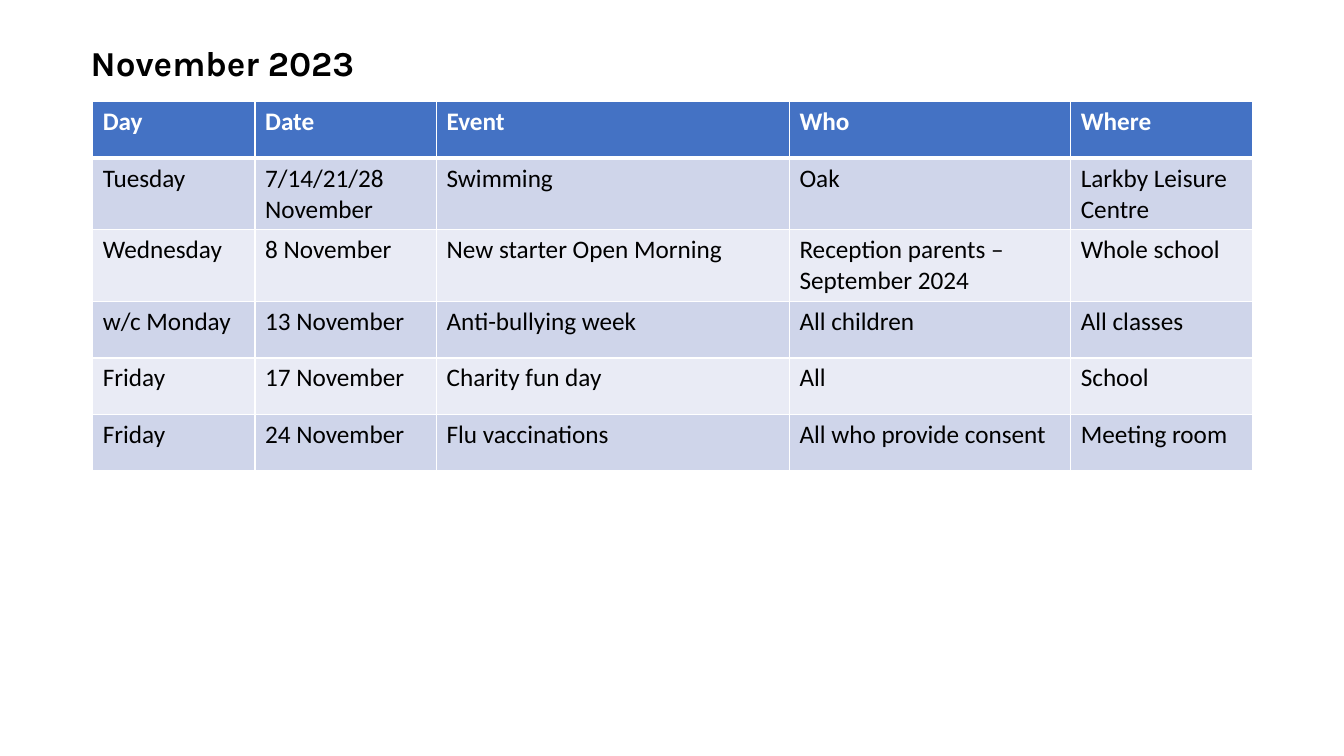
from dataclasses import dataclass

from lxml import etree
from pptx import Presentation
from pptx import util as u
from pptx.dml.color import RGBColor
from pptx.enum import text
from pptx.oxml import ns

PX = 9144  # 100 px to the inch


@dataclass(frozen=True)
class Theme:
    title_font: str = "Karla"
    body_font: str = "Calibri"
    title_size: int = 25
    body_size: int = 18
    ink: str = "000000"
    paper: str = "FFFFFF"
    header: str = "4472C4"
    bands: tuple = ("CFD5EA", "E9EBF5")
    thin: int = 1
    thick: int = 3


THEME = Theme()

COLUMN_WIDTHS = (161, 180, 350, 279, 180)
ROW_HEIGHT = 56
EVENTS = (
    ("Day", "Date", "Event", "Who", "Where"),
    ("Tuesday", "7/14/21/28 November", "Swimming", "Oak", "Larkby Leisure Centre"),
    ("Wednesday", "8 November", "New starter Open Morning",
     "Reception parents – September 2024", "Whole school"),
    ("w/c Monday", "13 November", "Anti-bullying week", "All children", "All classes"),
    ("Friday", "17 November", "Charity fun day", "All", "School"),
    ("Friday", "24 November", "Flu vaccinations", "All who provide consent",
     "Meeting room"),
)


def px(*lengths):
    return [u.Emu(length * PX) for length in lengths]


def style_font(font, name, size, color, bold):
    font.name, font.size, font.bold = name, u.Pt(size), bold
    font.color.rgb = RGBColor.from_string(color)


def set_title(s, wording, left, top, width, height):
    sp = s.shapes.title
    sp.left, sp.top, sp.width, sp.height = px(left, top, width, height)
    tf = sp.text_frame
    tf.text = wording
    tf.auto_size = text.MSO_AUTO_SIZE.NONE
    tf.vertical_anchor = text.MSO_ANCHOR.MIDDLE
    p = tf.paragraphs[0]
    p.alignment = text.PP_ALIGN.LEFT
    style_font(p.font, THEME.title_font, THEME.title_size, THEME.ink, True)


def set_borders(cell, top, bottom):
    tc_pr = cell._tc.get_or_add_tcPr()
    widths = {"lnL": THEME.thin, "lnR": THEME.thin, "lnT": top, "lnB": bottom}
    for side, width in widths.items():
        ln = etree.SubElement(tc_pr, ns.qn(f"a:{side}"), w=str(u.Pt(width)))
        fill = etree.SubElement(ln, ns.qn("a:solidFill"))
        etree.SubElement(fill, ns.qn("a:srgbClr"), val=THEME.paper)


def fill_cell(cell, wording, row):
    is_header = row == 0
    # The rule under the header is shared by the first two rows
    set_borders(cell,
                top=THEME.thick if row == 1 else THEME.thin,
                bottom=THEME.thick if is_header else THEME.thin)
    cell.fill.solid()
    color = THEME.header if is_header else THEME.bands[(row - 1) % 2]
    cell.fill.fore_color.rgb = RGBColor.from_string(color)
    cell.text = wording
    style_font(cell.text_frame.paragraphs[0].font, THEME.body_font,
               THEME.body_size, THEME.paper if is_header else THEME.ink, is_header)


def add_events_table(s, left, top):
    size = px(sum(COLUMN_WIDTHS), ROW_HEIGHT * len(EVENTS))
    table = s.shapes.add_table(len(EVENTS), len(COLUMN_WIDTHS),
                               *px(left, top), *size).table
    for column, width in zip(table.columns, px(*COLUMN_WIDTHS)):
        column.width = width
    for row, event in enumerate(EVENTS):
        for col, wording in enumerate(event):
            fill_cell(table.cell(row, col), wording, row)


def main():
    prs = Presentation()
    prs.slide_width, prs.slide_height = px(1333, 750)
    s = prs.slides.add_slide(prs.slide_layouts.get_by_name("Title Only"))

    # Month heading
    set_title(s, "November 2023", 80, 36, 445, 52)

    # Calendar of events
    add_events_table(s, 92, 101)

    prs.save("out.pptx")


if __name__ == "__main__":
    main()
